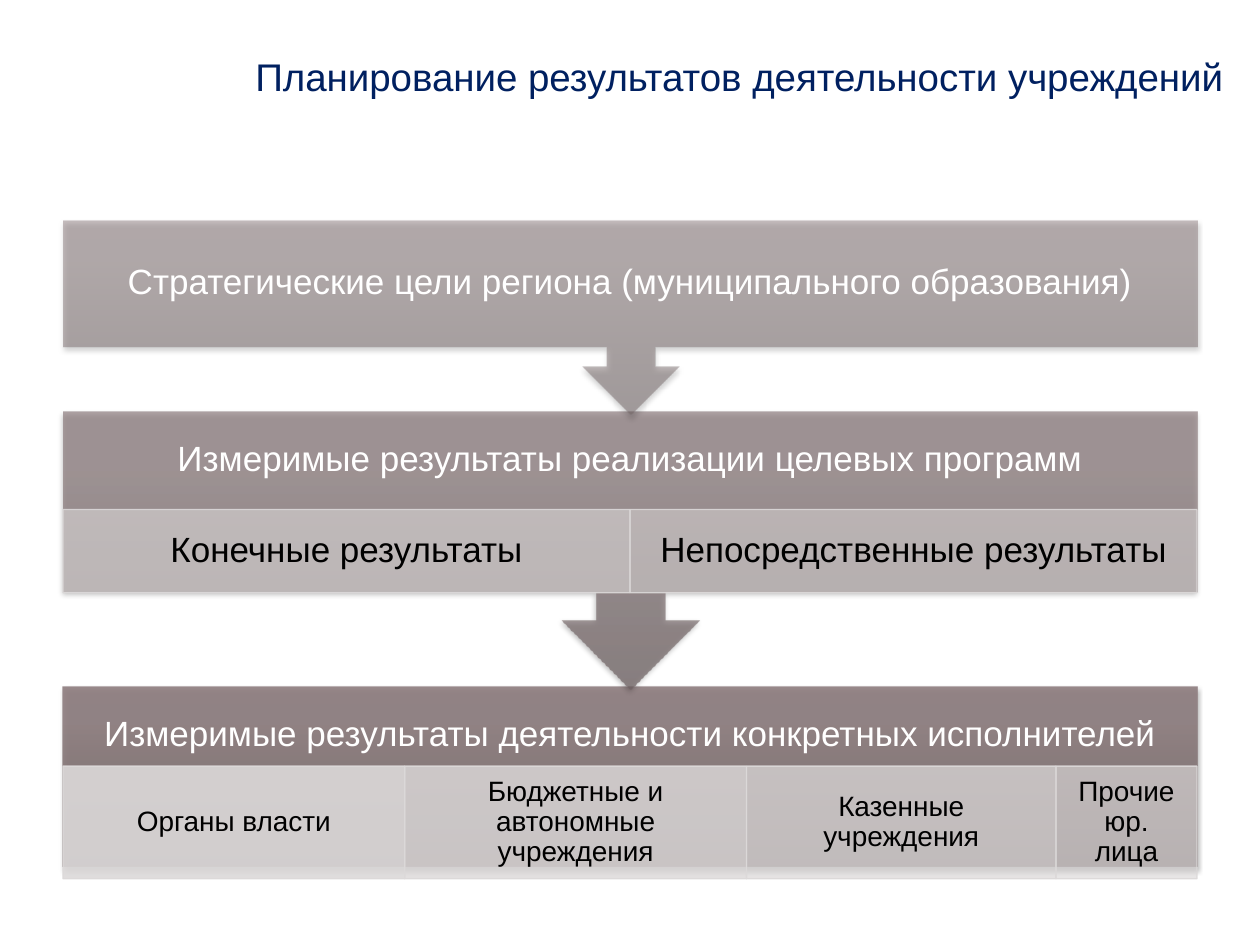
from lxml import etree
from pptx import Presentation
from pptx.dml.color import RGBColor
from pptx.enum import shapes, text
from pptx.oxml import parse_xml
from pptx.oxml.ns import qn
from pptx.util import Pt

NS = 'xmlns:a="http://schemas.openxmlformats.org/drawingml/2006/main"'
BAND_STOPS = [(0, "6E6162"), (80, "8E7E7F"), (100, "8F7E80")]
TITLE_STOPS = [(38, "002060"), (100, "0070C0")]
CELL_COLOUR = "DCD9D9"


def rgb(value):
    return RGBColor.from_string(value)


def set_alpha(properties, percent):
    for colour in properties.iter(qn("a:srgbClr")):
        etree.SubElement(colour, qn("a:alpha")).set("val", str(percent * 1000))


def set_gradient(fill, properties, stops, alpha=100):
    """Run the stops from bottom to top, whatever the rotation."""
    fill.gradient()
    stop_xml = "".join(
        f'<a:gs pos="{pos * 1000}"><a:srgbClr val="{colour}"/></a:gs>'
        for pos, colour in stops)
    gradient = parse_xml(
        f'<a:gradFill {NS} rotWithShape="0"><a:gsLst>{stop_xml}</a:gsLst>'
        '<a:lin ang="16200000" scaled="0"/></a:gradFill>')
    if alpha < 100:
        set_alpha(gradient, alpha)
    properties.replace(properties.find(qn("a:gradFill")), gradient)


def add_shadow(shape):
    shape.shadow.inherit = False
    effects = shape._element.spPr.find(qn("a:effectLst"))
    effects.append(parse_xml(
        f'<a:outerShdw {NS} blurRad="40000" dist="23000" dir="5400000" rotWithShape="0">'
        '<a:srgbClr val="000000"><a:alpha val="35000"/></a:srgbClr></a:outerShdw>'))


def write(shape, words, size, colour, inset_x, inset_y):
    frame = shape.text_frame
    frame.text = words
    frame.word_wrap = True
    frame.vertical_anchor = text.MSO_ANCHOR.MIDDLE
    frame.margin_left = frame.margin_right = Pt(inset_x)
    frame.margin_top = frame.margin_bottom = Pt(inset_y)
    paragraph = frame.paragraphs[0]
    paragraph.alignment = text.PP_ALIGN.CENTER
    paragraph.line_spacing = 0.9
    font = paragraph.runs[0].font
    font.name, font.size = "Arial", Pt(size)
    font.color.rgb = rgb(colour)


def add_title(slide, words, left, top, width, height):
    title = slide.shapes.title
    title.left, title.top, title.width, title.height = map(Pt, (left, top, width, height))
    frame = title.text_frame
    frame.text = words
    frame.word_wrap = True
    frame.vertical_anchor = text.MSO_ANCHOR.MIDDLE
    paragraph = frame.paragraphs[0]
    paragraph.alignment = text.PP_ALIGN.RIGHT
    run = paragraph.runs[0]
    run.font.name, run.font.size = "Arial", Pt(22)
    set_gradient(run.font.fill, run._r.rPr, TITLE_STOPS)


def add_band(slide, heading, left, top, width, height, heading_height, alpha, arrow=True):
    """A shaded band with its heading; an arrow leads to the band below."""
    kind = shapes.MSO_SHAPE.UP_ARROW_CALLOUT if arrow else shapes.MSO_SHAPE.RECTANGLE
    band = slide.shapes.add_shape(kind, Pt(left), Pt(top), Pt(width), Pt(height))
    band.rotation = 180 if arrow else 0
    set_gradient(band.fill, band._element.spPr, BAND_STOPS, alpha)
    band.line.fill.background()
    add_shadow(band)
    label = slide.shapes.add_textbox(Pt(left), Pt(top), Pt(width), Pt(heading_height))
    write(label, heading, 20, "FFFFFF", 11.2, 11.2)


def add_cells(slide, cells, left, top, height, size, inset_x, inset_y, first_alpha):
    """A row of cells, each more transparent than the one before."""
    for index, (words, width) in enumerate(cells):
        cell = slide.shapes.add_shape(
            shapes.MSO_SHAPE.RECTANGLE, Pt(left), Pt(top), Pt(width), Pt(height))
        cell.shadow.inherit = False
        cell.fill.solid()
        cell.fill.fore_color.rgb = rgb(CELL_COLOUR)
        set_alpha(cell._element.spPr, first_alpha - 8 * index)
        cell.line.color.rgb = rgb(CELL_COLOUR)
        cell.line.width = Pt(0.75)
        set_alpha(cell.line._ln, 90)
        write(cell, words, size, "000000", inset_x, inset_y)
        left += width


def main():
    prs = Presentation()
    prs.slide_width, prs.slide_height = Pt(720), Pt(540)
    slide = prs.slides.add_slide(prs.slide_layouts[5])
    left, width = 36, 648

    add_title(slide, "Планирование результатов деятельности учреждений",
              111, 9.4, 595.4, 67.7)

    # Performers: the lowest level lies at the back
    add_band(slide, "Измеримые результаты деятельности конкретных исполнителей",
             left, 392.4, width, 103, 55.4, alpha=90, arrow=False)
    performers = [("Органы власти", 195.3),
                  ("Бюджетные и автономные учреждения", 195.3),
                  ("Казенные учреждения", 176.8),
                  ("Прочие юр. лица", 80.6)]
    add_cells(slide, performers, left, 437.8, 64.4, 16, 8.96, 1.6, first_alpha=90)

    # Programme results
    add_band(slide, "Измеримые результаты реализации целевых программ",
             left, 235.4, width, 158.4, 55.4, alpha=70)
    results = [("Конечные результаты", width / 2),
               ("Непосредственные результаты", width / 2)]
    add_cells(slide, results, left, 291.2, 47.5, 20, 11.2, 2, first_alpha=58)

    # Strategic goals
    add_band(slide, "Стратегические цели региона (муниципального образования)",
             left, 126, width, 110.9, 72, alpha=50)

    prs.save("out.pptx")


if __name__ == "__main__":
    main()
